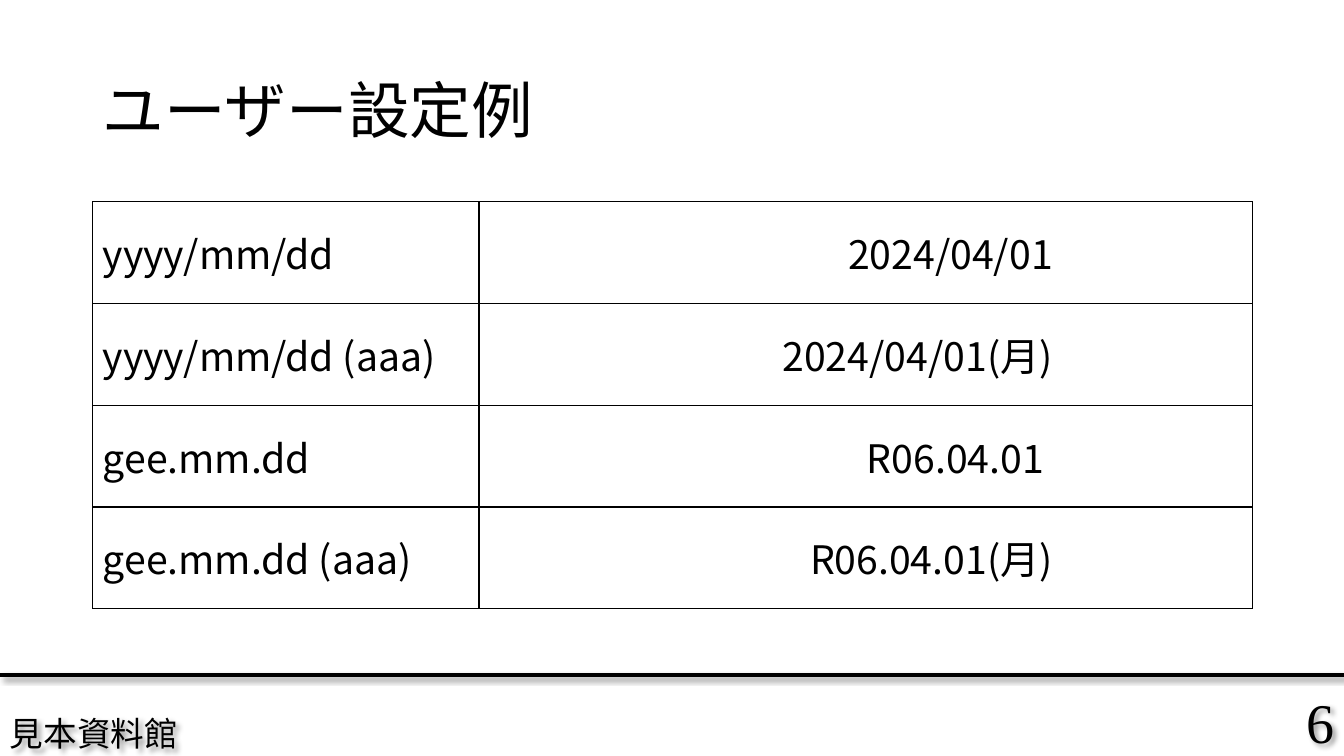
from dataclasses import dataclass

from lxml import etree
from pptx import Presentation
from pptx.dml.color import RGBColor
from pptx.enum.shapes import MSO_CONNECTOR
from pptx.enum.text import MSO_ANCHOR, MSO_AUTO_SIZE, PP_ALIGN
from pptx.oxml.ns import qn
from pptx.util import Inches, Pt

LEFT, RIGHT = PP_ALIGN.LEFT, PP_ALIGN.RIGHT
MIDDLE = MSO_ANCHOR.MIDDLE
NO_FIT = MSO_AUTO_SIZE.NONE
STRAIGHT = MSO_CONNECTOR.STRAIGHT
TITLE_ONLY = 5
WIDTH, HEIGHT = 13.33, 7.5


@dataclass(frozen=True)
class Theme:
    ink: str = "000000"
    sans: str = "Noto Sans CJK JP"
    serif: str = "Times New Roman"
    title: int = 44
    cell: int = 28
    foot: int = 24
    number: int = 40
    border: int = 1
    rule: int = 3


class Page:
    def __init__(self, slide, theme):
        self.slide = slide
        self.theme = theme
        self.ink = RGBColor.from_string(theme.ink)

    def fill_in(self, para, text, size, face, align=LEFT):
        para.text = text
        para.alignment = align
        font = para.font
        font.size = Pt(size)
        font.color.rgb = self.ink
        font.name = face
        if face == self.theme.sans:
            props = para._p.pPr.find(qn("a:defRPr"))
            etree.SubElement(props, qn("a:ea"), typeface=face)

    def shade(self, shape):
        effects = etree.SubElement(shape._element.spPr, qn("a:effectLst"))
        shadow = etree.SubElement(
            effects, qn("a:outerShdw"), blurRad=str(Pt(4)),
            dist=str(Pt(3)), dir=str(45 * 60000), algn="tl", rotWithShape="0")
        color = etree.SubElement(shadow, qn("a:srgbClr"), val=self.theme.ink)
        etree.SubElement(color, qn("a:alpha"), val="40000")

    def title(self, text, box):
        shape = self.slide.shapes.title
        shape.left, shape.top, shape.width, shape.height = map(Inches, box)
        frame = shape.text_frame
        frame.auto_size = NO_FIT
        frame.vertical_anchor = MIDDLE
        para = frame.paragraphs[0]
        self.fill_in(para, text, self.theme.title, self.theme.sans)
        para.line_spacing = 0.9

    def label(self, text, box, size, align=LEFT):
        shape = self.slide.shapes.add_textbox(*map(Inches, box))
        frame = shape.text_frame
        frame.word_wrap = True
        frame.vertical_anchor = MIDDLE
        self.fill_in(frame.paragraphs[0], text, size, self.theme.serif, align)
        self.shade(shape)

    def rule(self, top):
        line = self.slide.shapes.add_connector(
            STRAIGHT, 0, Inches(top), Inches(WIDTH), Inches(top))
        line.line.color.rgb = self.ink
        line.line.width = Pt(self.theme.rule)
        self.shade(line)

    def edge(self, cell, side, shown):
        props = cell._tc.get_or_add_tcPr()
        line = etree.SubElement(
            props, qn(f"a:ln{side}"), w=str(Pt(self.theme.border)))
        if shown:
            fill = etree.SubElement(line, qn("a:solidFill"))
            etree.SubElement(fill, qn("a:srgbClr"), val=self.theme.ink)
        else:
            etree.SubElement(line, qn("a:noFill"))

    def table(self, rows, left, top, widths, height):
        grid = self.slide.shapes.add_table(
            len(rows), len(widths), Inches(left), Inches(top),
            Inches(sum(widths)), Inches(height * len(rows))).table
        grid.first_row = grid.horz_banding = False
        for column, width in zip(grid.columns, widths):
            column.width = Inches(width)
        for r, row in enumerate(rows):
            grid.rows[r].height = Inches(height)
            for c in range(len(widths)):
                cell = grid.cell(r, c)
                cell.vertical_anchor = MIDDLE
                for side in "LRTB":
                    self.edge(cell, side, (c, side) not in ((1, "R"), (2, "L")))
                cell.fill.background()
                if c < len(row):
                    self.fill_in(cell.text_frame.paragraphs[0], row[c],
                                 self.theme.cell, self.theme.sans,
                                 RIGHT if c else LEFT)


def main():
    deck = Presentation()
    deck.slide_width, deck.slide_height = Inches(WIDTH), Inches(HEIGHT)
    theme = Theme()
    page = Page(deck.slides.add_slide(deck.slide_layouts[TITLE_ONLY]), theme)
    page.label("6", (11.55, 6.82, 1.78, 0.66), theme.number, RIGHT)
    page.label("見本資料館", (0, 7.05, 3.6, 0.45), theme.foot)
    page.rule(6.7)
    page.title("ユーザー設定例", (0.92, 0.4, 11.5, 1.45))
    rows = [
        ("yyyy/mm/dd", "2024/04/01"),
        ("yyyy/mm/dd (aaa)", "2024/04/01(月)"),
        ("gee.mm.dd", "R06.04.01 "),
        ("gee.mm.dd (aaa)", "R06.04.01(月)"),
    ]
    page.table(rows, 0.92, 2, (3.83, 5.79, 1.88), 1.01)
    deck.save("out.pptx")


if __name__ == "__main__":
    main()
